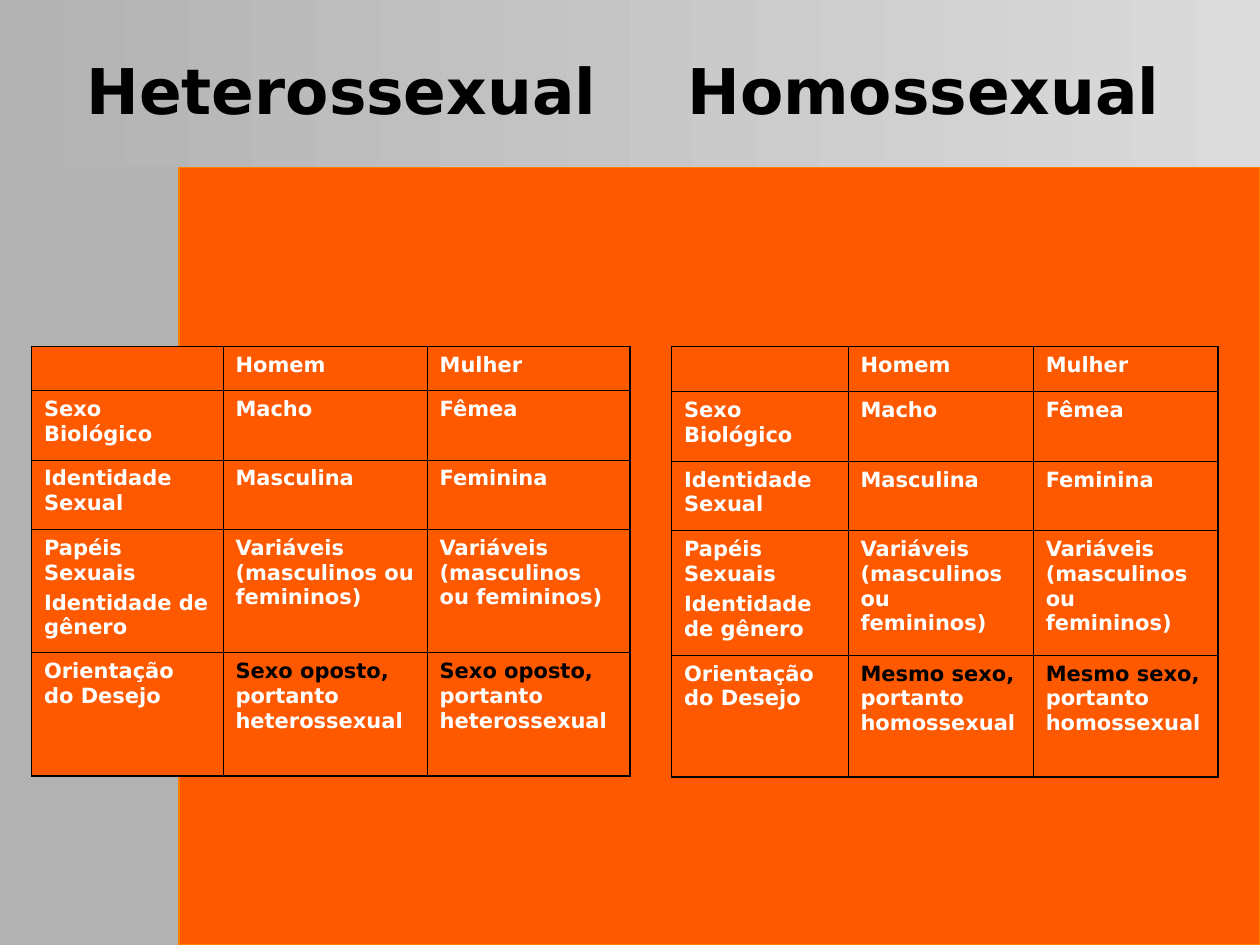
import pptx
import pptx.util
import pptx.dml.color
import pptx.enum.shapes
import pptx.enum.text
from lxml import etree

Inches, Pt = pptx.util.Inches, pptx.util.Pt
FONT = "DejaVu Sans"
WIDE, HIGH = 10, 7.5
SIDE, TOP = 1.42, 1.33          # width of the left band, height of the header
COLORS = {
    "light": "DBDBDB", "gray": "B2B2B2", "orange": "FF5900",
    "edge": "FF7D00", "black": "000000", "white": "FFFFFF",
}
THIN, THICK = 0.45, 1.08        # cell border widths in points


def color(name):
    return pptx.dml.color.RGBColor.from_string(COLORS[name])


def style(font, size, name):
    font.name, font.size, font.bold = FONT, Pt(size), True
    font.color.rgb = color(name)


def panel(slide, left, top, width, height, fill, line=None):
    box = slide.shapes.add_shape(
        pptx.enum.shapes.MSO_SHAPE.RECTANGLE,
        Inches(left), Inches(top), Inches(width), Inches(height))
    box.shadow.inherit = False
    if isinstance(fill, tuple):
        box.fill.gradient()
        box.fill.gradient_angle = 180
        for stop, name in zip(box.fill.gradient_stops, fill):
            stop.color.rgb = color(name)
            stop.position = fill.index(name)
    else:
        box.fill.solid()
        box.fill.fore_color.rgb = color(fill)
    if line:
        box.line.color.rgb = color(line)
        box.line.width = Pt(0.75)
    else:
        box.line.fill.background()


def heading(shape, text, left, width):
    shape.left, shape.top = Inches(left), Inches(0.17)
    shape.width, shape.height = Inches(width), Inches(1.08)
    frame = shape.text_frame
    frame.text = text
    frame.word_wrap = True
    frame.auto_size = pptx.enum.text.MSO_AUTO_SIZE.NONE
    frame.vertical_anchor = pptx.enum.text.MSO_ANCHOR.MIDDLE
    para = frame.paragraphs[0]
    para.alignment = pptx.enum.text.PP_ALIGN.CENTER
    style(para.font, 36, "black")


def border(cell, widths):
    props = cell._tc.get_or_add_tcPr()
    space = "{" + props.nsmap["a"] + "}"
    for side, width in zip("LRTB", widths):
        line = etree.SubElement(props, space + "ln" + side, w=str(Pt(width)))
        fill = etree.SubElement(line, space + "solidFill")
        etree.SubElement(fill, space + "srgbClr", val=COLORS["black"])


def write(cell, text):
    """Lines split paragraphs; words before a bar stand out in black."""
    frame = cell.text_frame
    for i, line in enumerate(text.split("\n")):
        para = frame.add_paragraph() if i else frame.paragraphs[0]
        para.line_spacing = 1.01
        if i:
            para.space_before = Pt(3)
        style(para.font, 12, "white")
        if not line:
            # keep the empty cell as low as its row
            space = "{" + para._p.nsmap["a"] + "}"
            etree.SubElement(para._p, space + "endParaRPr", sz="1200")
            continue
        parts = line.split("|")
        for part in parts:
            para.add_run().text = part
        if len(parts) > 1:
            para.runs[0].font.color.rgb = color("black")


def grid(slide, left, cols, rows, wish):
    texts = [
        ["", "Homem", "Mulher"],
        ["Sexo Biológico", "Macho", "Fêmea"],
        ["Identidade Sexual", "Masculina", "Feminina"],
        ["Papéis Sexuais\nIdentidade de gênero"]
        + ["Variáveis (masculinos ou femininos)"] * 2,
        ["Orientação do Desejo"] + [wish] * 2,
    ]
    table = slide.shapes.add_table(
        len(rows), len(cols), Inches(left), Inches(2.75),
        Inches(sum(cols)), Inches(sum(rows))).table
    table.first_row = table.horz_banding = False
    for col, width in zip(table.columns, cols):
        col.width = Inches(width)
    for row, height in zip(table.rows, rows):
        row.height = Inches(height)
    for r, line in enumerate(texts):
        for c, text in enumerate(line):
            cell = table.cell(r, c)
            outer = (c == 0, c == len(cols) - 1, r == 0, r == len(rows) - 1)
            border(cell, [THICK if edge else THIN for edge in outer])
            cell.fill.solid()
            cell.fill.fore_color.rgb = color("orange")
            write(cell, text)


def main():
    deck = pptx.Presentation()
    deck.slide_width, deck.slide_height = Inches(WIDE), Inches(HIGH)
    slide = deck.slides.add_slide(deck.slide_layouts[5])
    title = slide.shapes.title

    # Backdrop
    panel(slide, 0, 0, WIDE, HIGH, ("light", "gray"))
    panel(slide, 0, TOP, SIDE, HIGH - TOP, "gray", "gray")
    panel(slide, SIDE, TOP, WIDE - SIDE, HIGH - TOP, "orange", "edge")

    # Headings, with the title lifted above the backdrop
    slide.shapes.element.append(title.element)
    heading(title, "Heterossexual", 0.5, 4.42)
    other = slide.shapes.add_textbox(0, 0, 0, 0)
    heading(other, "Homossexual", 5.33, 4)

    # Tables
    grid(slide, 0.25, [1.52, 1.62, 1.61], [0.35, 0.55, 0.55, 0.98, 0.98],
         "Sexo oposto,| portanto heterossexual")
    grid(slide, 5.33, [1.4, 1.47, 1.47], [0.36, 0.55, 0.55, 0.99, 0.97],
         "Mesmo sexo,| portanto homossexual")

    deck.save("out.pptx")


if __name__ == "__main__":
    main()
